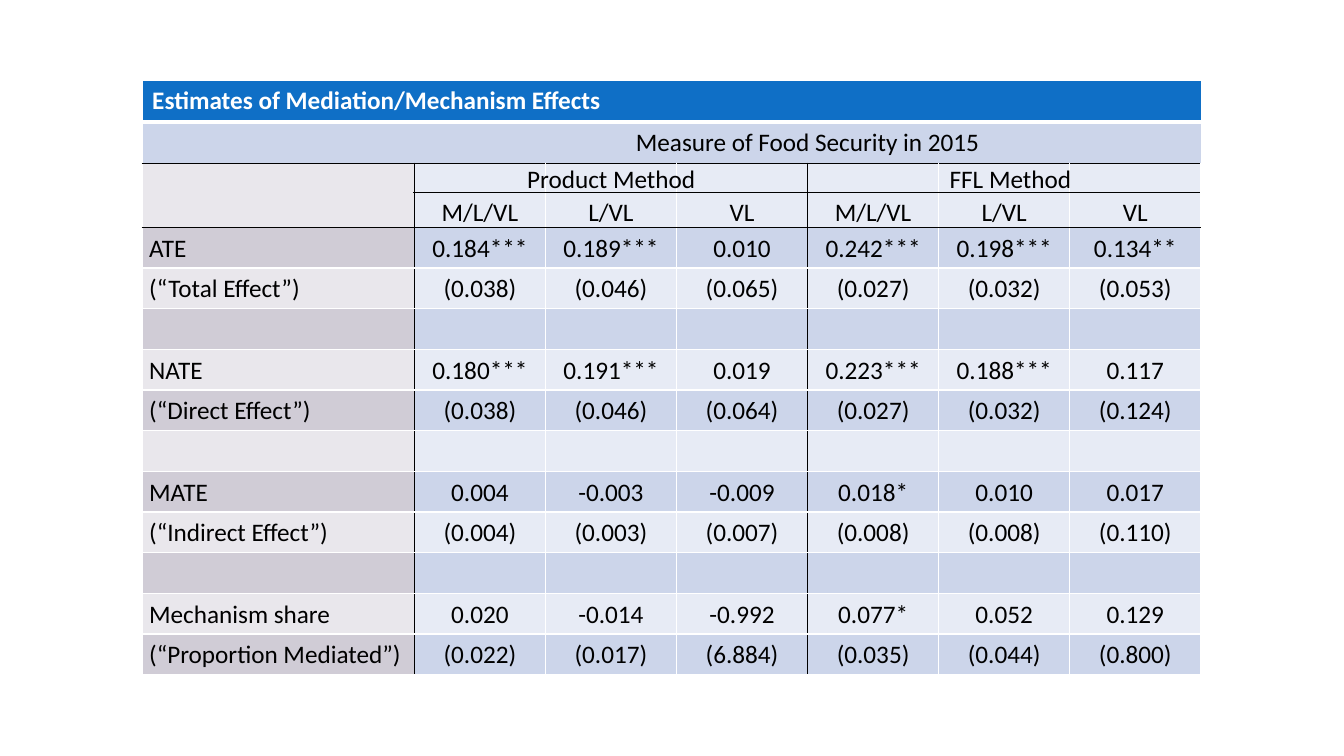
from pptx import Presentation
from pptx import util as u
from pptx.dml.color import RGBColor
from pptx.enum import text as t
from pptx.oxml import parse_xml
from pptx.oxml.ns import nsdecls

SCALE = 9144
BLACK, WHITE = "000000", "FFFFFF"
BLUE = "0F6FC6"
BANDS = ["E7EBF5", "CCD5EA"]
LABELS = ["E9E7EC", "D0CCD6"]
WIDTHS = [270] + [130] * 6
HEIGHTS = [41, 41, 64] + [40, 40, 41] * 3 + [40, 40]
HEADS = ["M/L/VL", "L/VL", "VL"]
ROWS = [
    ["Estimates of Mediation/Mechanism Effects"],
    ["", "Measure of Food Security in 2015"],
    [""] + HEADS * 2,
    ["ATE", "0.184***", "0.189***", "0.010", "0.242***", "0.198***", "0.134**"],
    ["(“Total Effect”)", "(0.038)", "(0.046)", "(0.065)", "(0.027)", "(0.032)", "(0.053)"],
    [],
    ["NATE", "0.180***", "0.191***", "0.019", "0.223***", "0.188***", "0.117"],
    ["(“Direct Effect”)", "(0.038)", "(0.046)", "(0.064)", "(0.027)", "(0.032)", "(0.124)"],
    [],
    ["MATE", "0.004", "-0.003", "-0.009", "0.018*", "0.010", "0.017"],
    ["(“Indirect Effect”)", "(0.004)", "(0.003)", "(0.007)", "(0.008)", "(0.008)", "(0.110)"],
    [],
    ["Mechanism share", "0.020", "-0.014", "-0.992", "0.077*", "0.052", "0.129"],
    ["(“Proportion Mediated”)", "(0.022)", "(0.017)", "(6.884)", "(0.035)", "(0.044)", "(0.800)"],
]


def px(n):
    """Turn px into EMU."""
    return u.Emu(n * SCALE)


def color(code):
    """Turn a hex string into a colour."""
    return RGBColor.from_string(code)


def style(para, code=BLACK, bold=False):
    """Format the runs of a paragraph."""
    for run in para.runs:
        run.font.name, run.font.size = "Calibri", u.Pt(18)
        run.font.bold, run.font.color.rgb = bold, color(code)


def edge(side, code, width):
    """Build one cell border, empty when there is no colour."""
    fill = f'<a:solidFill><a:srgbClr val="{code}"/></a:solidFill>' if code else "<a:noFill/>"
    return parse_xml(f'<a:ln{side} {nsdecls("a")} w="{u.Pt(width)}">{fill}</a:ln{side}>')


def upright(row, col):
    """Give the colour of the line to the right of a column."""
    if col in (-1, 6):
        return WHITE
    if row < 2:
        return None
    return BLACK if col in (0, 3) else WHITE


def level(row):
    """Give the colour and width of the line below a row."""
    return (BLACK if row in (1, 2) else WHITE), (3 if row == 0 else 1)


def frame(cell, row, col):
    """Draw the four borders of a cell."""
    props = cell._tc.get_or_add_tcPr()
    edges = [("L", upright(row, col - 1), 1), ("R", upright(row, col), 1),
             ("T", *level(row - 1)), ("B", *level(row))]
    for spot, item in enumerate(edges):
        props.insert(spot, edge(*item))


def shade(row, col):
    """Give the fill of a cell."""
    if row == 0:
        return BLUE
    return (LABELS if col == 0 and row > 1 else BANDS)[row % 2]


def fill(cell, row, col, words):
    """Write and format one cell."""
    cell.fill.solid()
    cell.fill.fore_color.rgb = color(shade(row, col))
    frame(cell, row, col)
    if not words:
        return
    cell.text_frame.text = words
    para = cell.text_frame.paragraphs[0]
    style(para, WHITE if row == 0 else BLACK, row == 0)
    if col:
        para.alignment = t.PP_ALIGN.CENTER
    if row:
        cell.vertical_anchor = t.MSO_ANCHOR.BOTTOM if row == 2 else t.MSO_ANCHOR.MIDDLE
    if row > 1:
        para.line_spacing = 1.07
        cell.margin_left = cell.margin_right = px(7)
        cell.margin_top = cell.margin_bottom = 0


def grid(slide):
    """Add the table of estimates."""
    table = slide.shapes.add_table(len(HEIGHTS), len(WIDTHS), px(141), px(80),
                                   px(sum(WIDTHS)), px(sum(HEIGHTS))).table
    for col, width in zip(table.columns, WIDTHS):
        col.width = px(width)
    for row, height in zip(table.rows, HEIGHTS):
        row.height = px(height)
    table.cell(0, 0).merge(table.cell(0, 6))
    table.cell(1, 1).merge(table.cell(1, 6))
    for row, words in enumerate(ROWS):
        for col in range(len(WIDTHS)):
            fill(table.cell(row, col), row, col, words[col] if col < len(words) else "")


def rule(slide, left, right, top):
    """Add a thin level line."""
    line = slide.shapes.add_connector(1, px(left), px(top), px(right), px(top))
    line.line.color.rgb, line.line.width = color(BLACK), u.Pt(0.5)
    line._element.spPr.append(parse_xml(f'<a:effectLst {nsdecls("a")}/>'))


def label(slide, words, left, width):
    """Add the name of a method above its columns."""
    box = slide.shapes.add_textbox(px(left), px(157), px(width), px(40))
    box.text_frame.text = words
    box.text_frame.word_wrap = False
    box.text_frame.auto_size = t.MSO_AUTO_SIZE.SHAPE_TO_FIT_TEXT
    style(box.text_frame.paragraphs[0])


def main():
    """Build the slide and save it."""
    deck = Presentation()
    deck.slide_width, deck.slide_height = px(1333), px(750)
    slide = deck.slides.add_slide(deck.slide_layouts[6])
    grid(slide)
    rule(slide, 410, 1190, 191)
    label(slide, "Product Method", 513, 189)
    label(slide, "FFL Method", 932, 142)
    deck.save("out.pptx")


if __name__ == "__main__":
    main()
